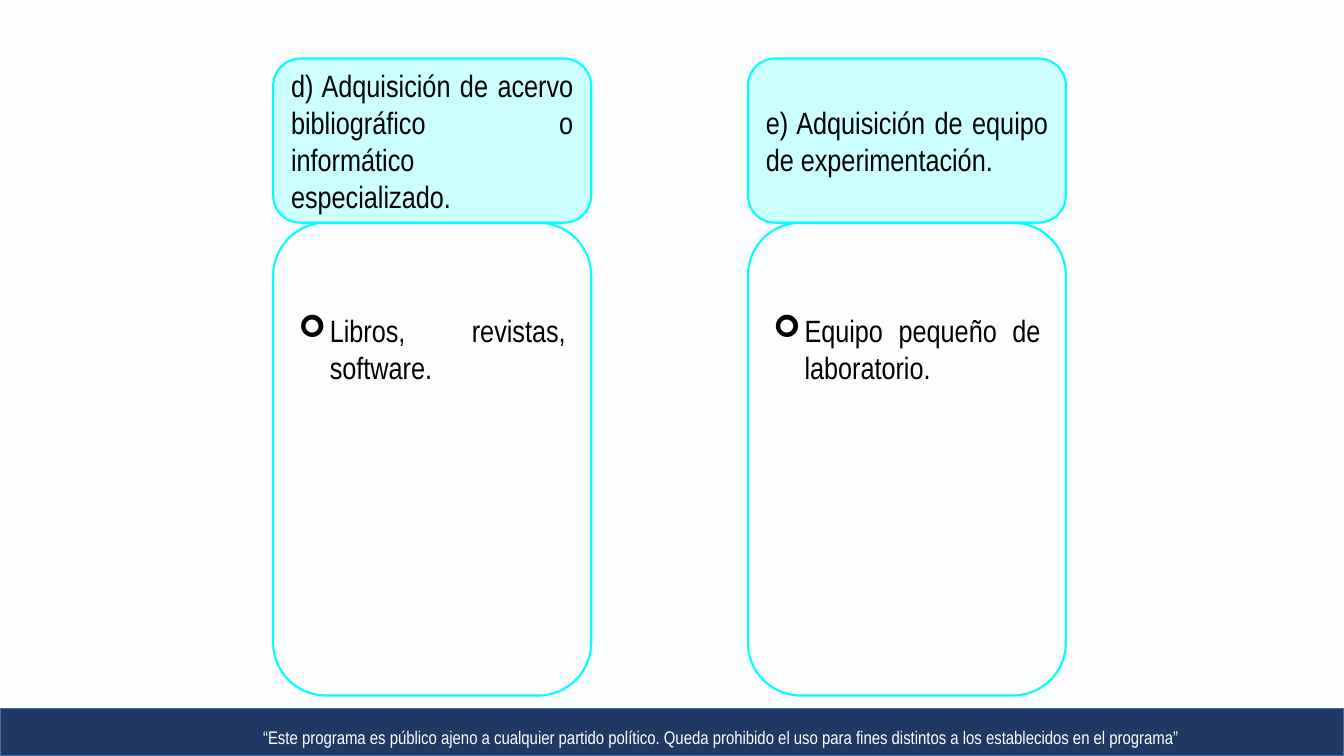
from lxml.etree import SubElement
from pptx import Presentation
from pptx.dml.color import RGBColor
from pptx.enum.shapes import MSO_SHAPE as Kind
from pptx.enum.text import MSO_ANCHOR as Anchor, PP_ALIGN as Align
from pptx.oxml.ns import qn
from pptx.util import Pt

CARDS = [
    ("d) Adquisición de acervo bibliográfico o informático especializado.",
     "Libros, revistas, software."),
    ("e) Adquisición de equipo de experimentación.",
     "Equipo pequeño de laboratorio."),
]
FOOTER = ("“Este programa es público ajeno a cualquier partido político. "
          "Queda prohibido el uso para fines distintos a los establecidos "
          "en el programa”")
COLORS = {"back": "FBFDFF", "head": "CCFFFF", "edge": "00FFFF",
          "band": "203864", "rim": "43739E", "ink": "000000",
          "light": "FFFFFF"}
FONT = "Arial Narrow"

WIDE, HIGH = 960, 540
LEFT, STEP, CARD_W = 195.1, 339.1, 227.2
HEAD_Y, HEAD_H, BODY_H = 41.8, 117.3, 337.7
BODY_Y = HEAD_Y + HEAD_H
BAND_Y = 506.2
NOTE_X, NOTE_Y, NOTE_W = 116.6, 513.4, 795.6
INDENT = 22.3


def color(name):
    return RGBColor.from_string(COLORS[name])


def add_box(slide, kind, x, y, w, h, fill, line, width):
    box = slide.shapes.add_shape(kind, Pt(x), Pt(y), Pt(w), Pt(h))
    box.shadow.inherit = False
    box.fill.solid()
    box.fill.fore_color.rgb = color(fill)
    box.line.color.rgb = color(line)
    box.line.width = Pt(width)
    return box


def put_text(box, text, size=22, ink="ink", align=Align.JUSTIFY,
             anchor=Anchor.MIDDLE, top=0, bullet=None):
    frame = box.text_frame
    frame.word_wrap = True
    frame.vertical_anchor = anchor
    frame.margin_top, frame.margin_bottom = Pt(top), 0
    para = frame.paragraphs[0]
    para.text = text
    para.alignment = align
    if bullet:
        props = para._p.get_or_add_pPr()
        props.set("marL", str(Pt(INDENT)))
        props.set("indent", str(-Pt(INDENT)))
        SubElement(props, qn("a:buFont")).set("typeface", "Wingdings")
        SubElement(props, qn("a:buChar")).set("char", bullet)
    font = para.runs[0].font
    font.name, font.size = FONT, Pt(size)
    font.color.rgb = color(ink)


def main():
    deck = Presentation()
    deck.slide_width, deck.slide_height = Pt(WIDE), Pt(HIGH)
    slide = deck.slides.add_slide(deck.slide_layouts[6])
    slide.background.fill.solid()
    slide.background.fill.fore_color.rgb = color("back")

    add_box(slide, Kind.RECTANGLE, 0, BAND_Y, WIDE, HIGH - BAND_Y,
            "band", "rim", 1)
    note = slide.shapes.add_textbox(Pt(NOTE_X), Pt(NOTE_Y), Pt(NOTE_W),
                                    Pt(HIGH - NOTE_Y))
    put_text(note, FOOTER, size=13, ink="light", align=Align.CENTER)

    for i, (title, item) in enumerate(CARDS):
        x = LEFT + i * STEP
        body = add_box(slide, Kind.ROUNDED_RECTANGLE, x, BODY_Y, CARD_W,
                       BODY_H, "back", "edge", 1.5)
        put_text(body, item, anchor=Anchor.TOP, top=52.7, bullet="➢")
        head = add_box(slide, Kind.ROUNDED_RECTANGLE, x, HEAD_Y, CARD_W,
                       HEAD_H, "head", "edge", 1.5)
        put_text(head, title)

    deck.save("out.pptx")


if __name__ == "__main__":
    main()
